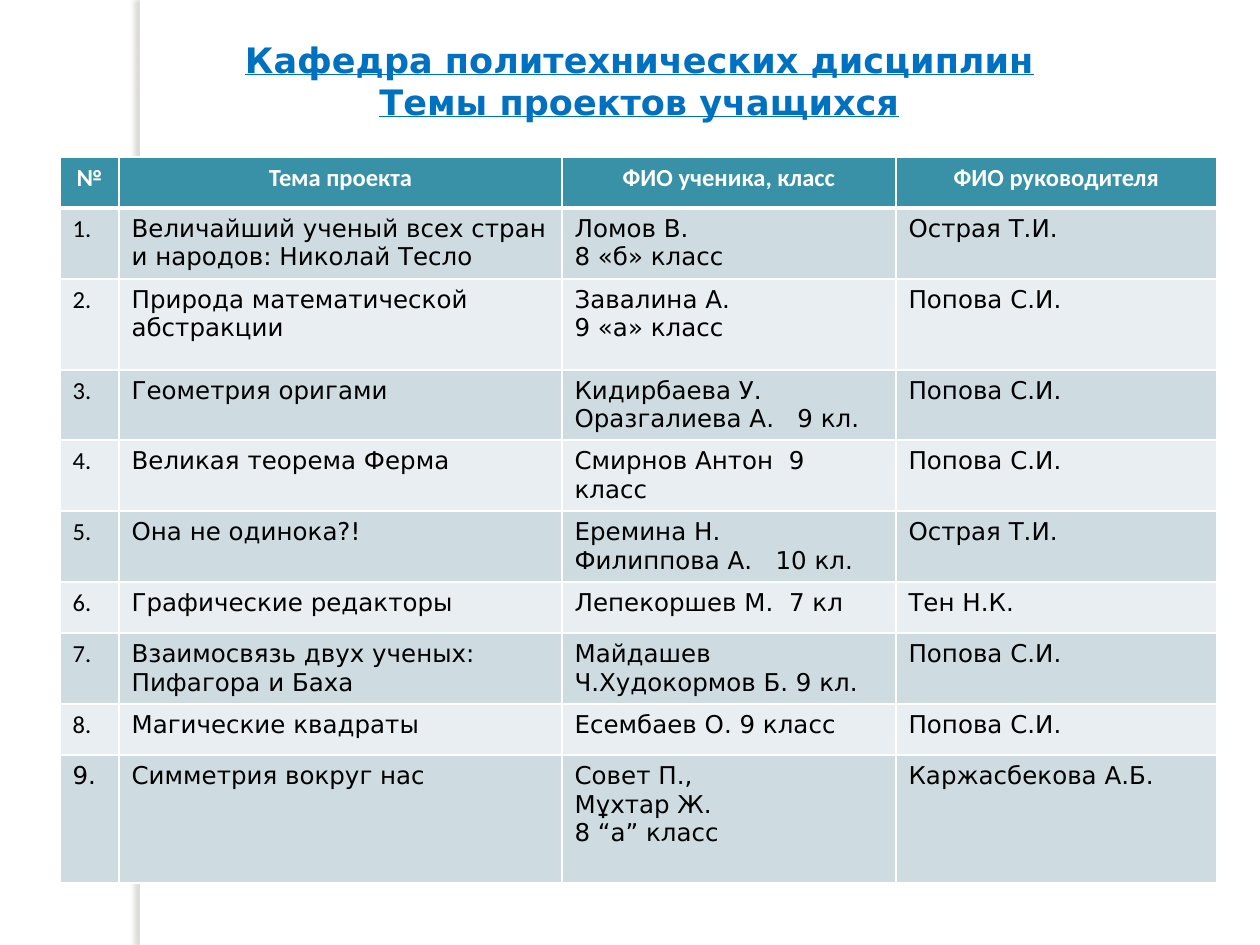
from lxml import etree
from pptx import Presentation
from pptx import util as u
from pptx.dml.color import RGBColor
from pptx.enum import shapes, text
from pptx.oxml import parse_xml
from pptx.oxml.ns import nsdecls, qn

PX = 914400 // 126
COLORS = {
    "white": "FFFFFF", "black": "000000", "title": "0070C0", "header": "3891A7",
    "odd": "CEDCE1", "even": "E8EEF1", "shadow": "736F63",
}
LABEL_FONT, BODY_FONT = "Calibri", "DejaVu Sans"

TITLE = ["Кафедра политехнических дисциплин", "Темы проектов учащихся"]
HEADERS = ["№", "Тема проекта", "ФИО ученика, класс", "ФИО руководителя"]
PROJECTS = [  # topic, students (one string per paragraph), supervisor
    ("Величайший ученый всех стран и народов: Николай Тесло",
     ["Ломов В.", "8 «б» класс"], "Острая Т.И."),
    ("Природа математической абстракции", ["Завалина А.", "9 «а» класс"], "Попова С.И."),
    ("Геометрия оригами", ["Кидирбаева У.  Оразгалиева А.   9 кл."], "Попова С.И."),
    ("Великая теорема Ферма", ["Смирнов Антон  9 класс"], "Попова С.И."),
    ("Она не одинока?!", ["Еремина Н.", "Филиппова А.   10 кл."], "Острая Т.И."),
    ("Графические редакторы", ["Лепекоршев М.  7 кл"], "Тен Н.К."),
    ("Взаимосвязь двух ученых: Пифагора и Баха",
     ["Майдашев Ч.Худокормов Б. 9 кл."], "Попова С.И."),
    ("Магические квадраты", ["Есембаев О. 9 класс"], "Попова С.И."),
    ("Симметрия вокруг нас", ["Совет П.,", "Мұхтар Ж.", "8 “а” класс"], "Каржасбекова А.Б."),
]
COLUMN_WIDTHS = [59, 443, 334, 321]
ROW_HEIGHTS = [51, 71, 91, 70, 71, 71, 51, 71, 51, 128]


def px(*lengths):
    return [u.Emu(length * PX) for length in lengths]


def rgb(name):
    return RGBColor.from_string(COLORS[name])


def write(frame, lines, size, font, color, bold=False, underline=None, align=None):
    for i, line in enumerate(lines):
        paragraph = frame.paragraphs[0] if i == 0 else frame.add_paragraph()
        paragraph.alignment = align
        run = paragraph.add_run()
        run.text = line
        run.font.size, run.font.name = u.Pt(size), font
        run.font.bold, run.font.underline = bold, underline
        run.font.color.rgb = rgb(color)


def set_borders(cell, **widths):
    """Draw white borders; widths in points are keyed by side letter."""
    properties = cell._tc.get_or_add_tcPr()
    for side, width in widths.items():
        line = etree.SubElement(properties, qn(f"a:ln{side}"), w=str(u.Pt(width)))
        fill = etree.SubElement(line, qn("a:solidFill"))
        etree.SubElement(fill, qn("a:srgbClr"), val=COLORS["white"])


def add_side_strip(slide):
    strip = slide.shapes.add_shape(shapes.MSO_SHAPE.RECTANGLE, *px(140, 0, 10, 945))
    strip.fill.solid()
    strip.fill.fore_color.rgb = rgb("white")
    strip.line.fill.background()
    strip._element.spPr.append(parse_xml(
        f'<a:effectLst {nsdecls("a")}>'
        f'<a:outerShdw blurRad="{u.Pt(3)}" dist="{u.Pt(3)}" dir="10800000" rotWithShape="0">'
        f'<a:srgbClr val="{COLORS["shadow"]}"><a:alpha val="25000"/></a:srgbClr>'
        '</a:outerShdw></a:effectLst>'))


def add_project_table(slide):
    rows = [[[header] for header in HEADERS]]
    for number, (topic, students, supervisor) in enumerate(PROJECTS, 1):
        rows.append([[f"{number}."], [topic], students, [supervisor]])
    table = slide.shapes.add_table(
        len(rows), len(HEADERS),
        *px(60, 157, sum(COLUMN_WIDTHS), sum(ROW_HEIGHTS))).table
    for column, width in zip(table.columns, px(*COLUMN_WIDTHS)):
        column.width = width
    for row, height in zip(table.rows, px(*ROW_HEIGHTS)):
        row.height = height

    for r, row in enumerate(rows):
        for c, lines in enumerate(row):
            cell = table.cell(r, c)
            set_borders(cell, L=1, R=1, T=3 if r == 1 else 1, B=3 if r == 0 else 1)
            cell.fill.solid()
            cell.fill.fore_color.rgb = rgb("header" if r == 0 else "odd" if r % 2 else "even")
            if r == 0:
                write(cell.text_frame, lines, 14, LABEL_FONT, "white", bold=True,
                      align=text.PP_ALIGN.CENTER)
            else:
                is_label = c == 0 and r < len(PROJECTS)
                write(cell.text_frame, lines, 14, LABEL_FONT if is_label else BODY_FONT, "black")


def add_title(slide):
    title = slide.shapes.title
    title.left, title.top, title.width, title.height = px(39, 29, 1201, 102)
    frame = title.text_frame
    frame.word_wrap = True
    frame.auto_size = text.MSO_AUTO_SIZE.NONE
    frame.vertical_anchor = text.MSO_ANCHOR.MIDDLE
    write(frame, TITLE, 20, BODY_FONT, "title", bold=True, underline=True,
          align=text.PP_ALIGN.CENTER)


def main():
    deck = Presentation()
    deck.slide_width, deck.slide_height = px(1260, 945)
    slide = deck.slides.add_slide(deck.slide_layouts[5])
    add_side_strip(slide)
    add_project_table(slide)
    add_title(slide)
    deck.save("out.pptx")


if __name__ == "__main__":
    main()
